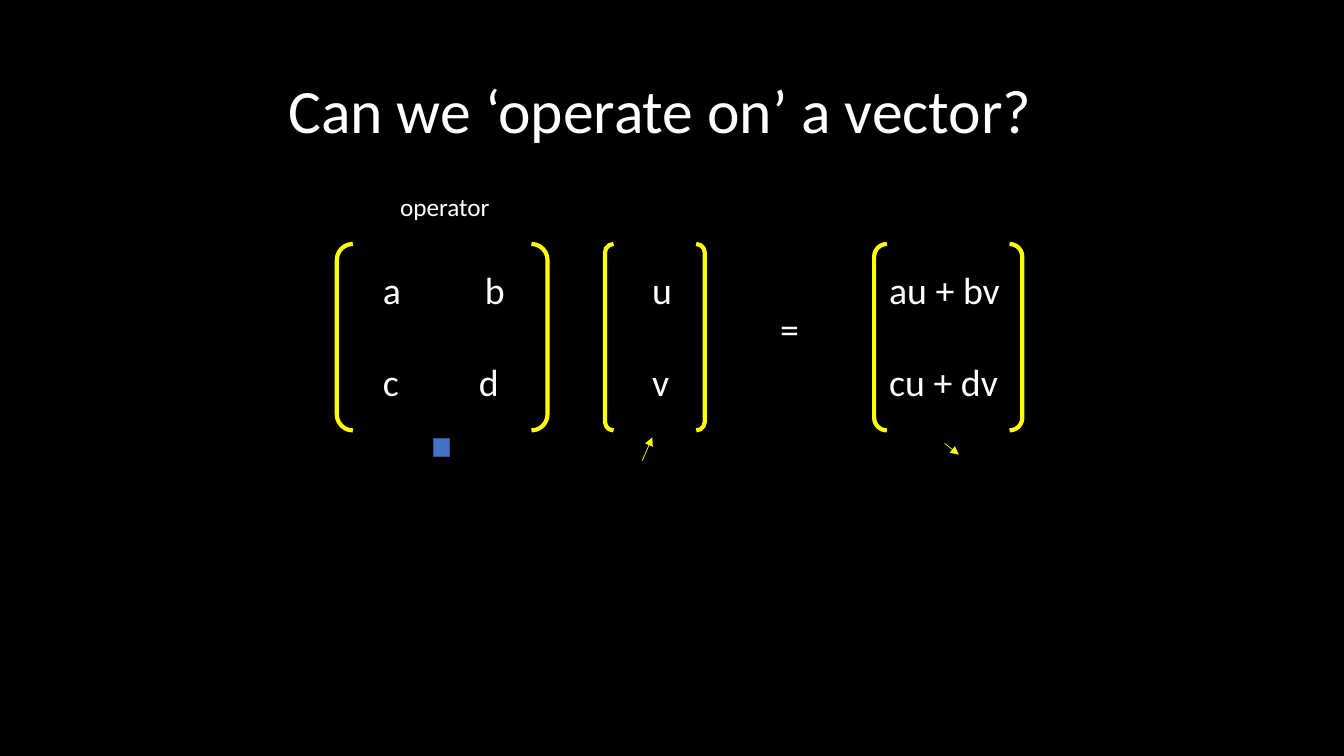
from dataclasses import dataclass

from lxml import etree
from pptx import Presentation
from pptx import util as u
from pptx.dml.color import RGBColor
from pptx.enum import shapes, text
from pptx.oxml.ns import qn


@dataclass(frozen=True)
class Theme:
    font: str = "Calibri"
    back: RGBColor = RGBColor(0, 0, 0)
    ink: RGBColor = RGBColor(255, 255, 255)
    accent: RGBColor = RGBColor(255, 255, 0)
    box: RGBColor = RGBColor(0x44, 0x72, 0xC4)
    box_edge: RGBColor = RGBColor(0x32, 0x54, 0x91)
    title: int = 44
    entry: int = 27
    label: int = 18


THEME = Theme()
MATRIX_TOP, MATRIX_HEIGHT = 2.42, 1.85
FIRST_ROW, ROW_STEP = 0.18, 0.91
ENTRY_HEIGHT = 0.56


def inches(*lengths):
    return [u.Inches(n) for n in lengths]


def style(p, size):
    p.font.name = THEME.font
    p.font.size = u.Pt(size)
    p.font.color.rgb = THEME.ink


def add_title(s, words, x, y, w, h):
    sp = s.shapes.title
    sp.left, sp.top, sp.width, sp.height = inches(x, y, w, h)
    tf = sp.text_frame
    tf.text = words
    tf.word_wrap = True
    tf.auto_size = text.MSO_AUTO_SIZE.NONE
    tf.vertical_anchor = text.MSO_ANCHOR.MIDDLE
    p = tf.paragraphs[0]
    p.alignment = text.PP_ALIGN.LEFT
    p.line_spacing = 0.9
    style(p, THEME.title)


def add_label(parent, words, x, y, w, h=ENTRY_HEIGHT, size=THEME.entry):
    tf = parent.shapes.add_textbox(*inches(x, y, w, h)).text_frame
    tf.word_wrap = True
    tf.text = words
    style(tf.paragraphs[0], size)


def add_matrix(s, x, y, w, h, entries):
    group = s.shapes.add_group_shape()
    for words, row, dx, width in entries:
        add_label(group, words, x + dx, y + FIRST_ROW + row * ROW_STEP, width)
    sp = group.shapes.add_shape(shapes.MSO_SHAPE.DOUBLE_BRACKET, *inches(x, y, w, h))
    sp.adjustments[0] = 0.086
    sp.shadow.inherit = False
    sp.fill.background()
    sp.line.color.rgb = THEME.accent
    sp.line.width = u.Pt(3)


def add_arrow(s, x1, y1, x2, y2):
    c = s.shapes.add_connector(shapes.MSO_CONNECTOR.STRAIGHT, *inches(x1, y1, x2, y2))
    c.line.color.rgb = THEME.accent
    c.line.width = u.Pt(0.5)
    etree.SubElement(c.line._get_or_add_ln(), qn("a:tailEnd"), type="triangle")
    etree.SubElement(c._element.spPr, qn("a:effectLst"))


def add_square(s, x, y, w, h):
    sp = s.shapes.add_shape(shapes.MSO_SHAPE.RECTANGLE, *inches(x, y, w, h))
    sp.shadow.inherit = False
    sp.fill.solid()
    sp.fill.fore_color.rgb = THEME.box
    sp.line.color.rgb = THEME.box_edge
    sp.line.width = u.Pt(1)


def add_equation(s, y, h):
    add_matrix(s, 3.34, y, 2.09, h, [
        ("a", 0, 0.36, 0.38), ("b", 0, 1.37, 0.38),
        ("c", 1, 0.36, 0.38), ("d", 1, 1.31, 0.38),
    ])
    add_matrix(s, 6, y, 0.99, h, [("u", 0, 0.37, 0.38), ("v", 1, 0.37, 0.38)])
    add_label(s, "=", 7.64, y + ENTRY_HEIGHT, 0.38)
    add_matrix(s, 8.67, y, 1.47, h, [
        ("au + bv", 0, 0.05, 1.74), ("cu + dv", 1, 0.05, 1.41),
    ])
    add_label(s, "operator", 3.87, y - 0.57, 1.56, 0.4, THEME.label)


def add_symbols(s, y):
    add_square(s, 4.3, y + 0.01, 0.16, 0.18)
    add_arrow(s, 6.37, y + 0.23, 6.47, y)
    add_arrow(s, 9.37, y + 0.06, 9.51, y + 0.17)


def main():
    prs = Presentation()
    prs.slide_width, prs.slide_height = inches(13.33, 7.5)
    s = prs.slides.add_slide(prs.slide_layouts[5])
    s.background.fill.solid()
    s.background.fill.fore_color.rgb = THEME.back
    add_title(s, "Can we ‘operate on’ a vector?", 2.76, 0.4, 8.62, 1.45)
    add_equation(s, MATRIX_TOP, MATRIX_HEIGHT)
    add_symbols(s, 4.34)
    prs.save("out.pptx")


if __name__ == "__main__":
    main()
